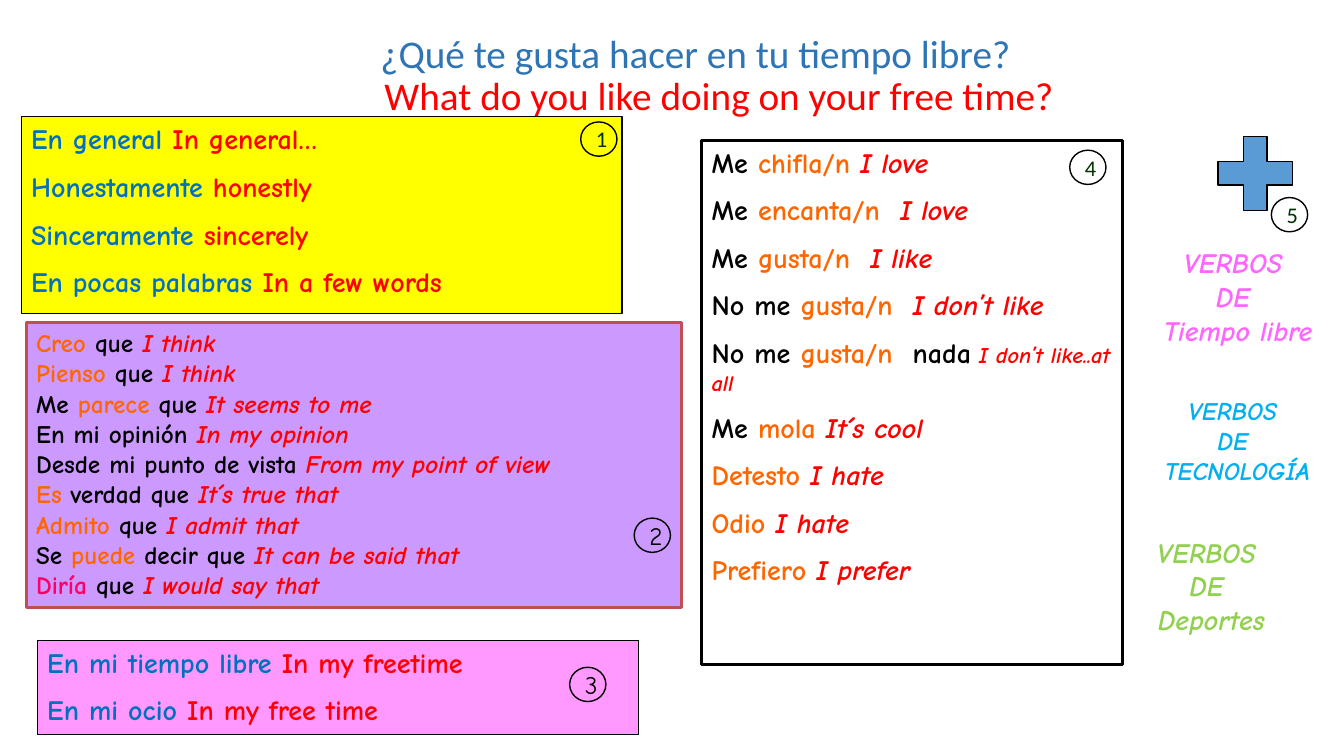
import dataclasses

import pptx
import pptx.dml.color
import pptx.enum.shapes
import pptx.enum.text
import pptx.util

PX = 9144
SHAPE = pptx.enum.shapes.MSO_SHAPE
ALIGN = pptx.enum.text.PP_ALIGN
ANCHOR = pptx.enum.text.MSO_ANCHOR


@dataclasses.dataclass(frozen=True)
class Theme:
    heading_font: str = "Calibri"
    body_font: str = "Comic Neue"
    title_size: int = 28
    large: int = 20
    medium: int = 18
    small: int = 16
    black: str = "000000"
    red: str = "FF0000"
    title_blue: str = "2E75B6"
    blue: str = "0070C0"
    orange: str = "FF6600"
    rose: str = "FF0066"
    dark_green: str = "003300"
    yellow: str = "FFFF00"
    purple: str = "CC99FF"
    pink: str = "FF99FF"
    brick: str = "C0504D"
    plus_blue: str = "5B9BD5"
    magenta: str = "FF66FF"
    cyan: str = "00B0F0"
    lime: str = "92D050"


THEME = Theme()

STYLES = {
    "spanish": (THEME.blue, False, THEME.large),
    "english": (THEME.red, False, THEME.large),
    "plain": (THEME.black, False, THEME.large),
    "verb": (THEME.orange, False, THEME.large),
    "meaning": (THEME.red, True, THEME.large),
    "small meaning": (THEME.red, True, THEME.small),
    "opinion plain": (THEME.black, False, THEME.medium),
    "opinion verb": (THEME.orange, False, THEME.medium),
    "opinion rose": (THEME.rose, False, THEME.medium),
    "opinion meaning": (THEME.red, True, THEME.medium),
}

OPENERS = [
    ("En general ", "In general…"),
    ("Honestamente ", "honestly"),
    ("Sinceramente ", "sincerely"),
    ("En pocas palabras ", "In a few words"),
]
FREE_TIME = [
    ("En mi tiempo libre ", "In my freetime"),
    ("En mi ocio ", "In my free time"),
]
OPINIONS = [
    ("", "Creo", " que ", "I think"),
    ("", "Pienso", " que ", "I think"),
    ("Me ", "parece", " que ", "It seems to me"),
    ("En mi opinión ", "", "", "In my opinion"),
    ("Desde mi punto de vista ", "", "", "From my point of view"),
    ("", "Es", " verdad que ", "It´s true that"),
    ("", "Admito", " que ", "I admit that"),
    ("Se ", "puede", " decir que ", "It can be said that"),
    ("", "Diría", " que ", "I would say that"),
]
LIKES = [
    ("Me ", "chifla/n ", "", "I love"),
    ("Me ", "encanta/n  ", "", "I love"),
    ("Me ", "gusta/n  ", "", "I like"),
    ("No me ", "gusta/n  ", "", "I don’t like"),
    ("No me ", "gusta/n  ", "nada", " I don’t like..at all"),
    ("Me ", "mola ", "", "It´s cool"),
    ("", "Detesto ", "", "I hate"),
    ("", "Odio ", "", "I hate"),
    ("", "Prefiero ", "", "I prefer"),
]


def color(value):
    return pptx.dml.color.RGBColor.from_string(value)


def scaled(box):
    return [length * PX for length in box]


def format_run(run, font, size, tint, bold=False, italic=False):
    run.font.name = font
    run.font.size = pptx.util.Pt(size)
    run.font.color.rgb = color(tint)
    run.font.bold = bold
    run.font.italic = italic


def add_outlined(slide, kind, box, fill, line, weight):
    shape = slide.shapes.add_shape(kind, *scaled(box))
    shape.shadow.inherit = False
    if fill:
        shape.fill.solid()
        shape.fill.fore_color.rgb = color(fill)
    else:
        shape.fill.background()
    shape.line.color.rgb = color(line)
    shape.line.width = pptx.util.Pt(weight)
    return shape


def add_title(slide, box):
    frame = slide.shapes.add_textbox(*scaled(box)).text_frame
    frame.word_wrap = True
    frame.vertical_anchor = ANCHOR.BOTTOM
    paragraph = frame.paragraphs[0]
    paragraph.text = (
        "¿Qué te gusta hacer en tu tiempo libre? \v"
        "What do you like doing on your free time?"
    )
    paragraph.alignment = ALIGN.CENTER
    paragraph.line_spacing = 0.9
    properties = paragraph._p.get_or_add_pPr()
    properties.set("marL", str(38 * PX))
    properties.set("indent", str(-38 * PX))
    for run, tint in zip(paragraph.runs, (THEME.title_blue, THEME.red)):
        format_run(run, THEME.heading_font, THEME.title_size, tint)


def add_panel(slide, box, rows, fill, line, weight, gap):
    shape = add_outlined(slide, SHAPE.RECTANGLE, box, fill, line, weight)
    frame = shape.text_frame
    frame.word_wrap = True
    frame.vertical_anchor = ANCHOR.TOP
    for index, row in enumerate(rows):
        paragraph = frame.add_paragraph() if index else frame.paragraphs[0]
        paragraph.alignment = ALIGN.LEFT
        paragraph.space_before = pptx.util.Pt(gap if index else 0)
        for style, text in row:
            if text:
                run = paragraph.add_run()
                run.text = text
                tint, italic, size = STYLES[style]
                format_run(run, THEME.body_font, size, tint, True, italic)


def translation_rows(pairs):
    return [zip(("spanish", "english"), pair) for pair in pairs]


def opinion_rows():
    for row in OPINIONS:
        verb = "opinion rose" if row[1] == "Diría" else "opinion verb"
        yield zip(("opinion plain", verb, "opinion plain", "opinion meaning"), row)


def like_rows():
    for row in LIKES:
        meaning = "small meaning" if row[2] else "meaning"
        yield zip(("plain", "verb", "plain", meaning), row)


def add_verb_heading(slide, box, topic, size, tint):
    frame = slide.shapes.add_textbox(*scaled(box)).text_frame
    frame.word_wrap = True
    frame.text = f"VERBOS \nDE \n{topic}"
    for paragraph in frame.paragraphs:
        paragraph.alignment = ALIGN.CENTER
        format_run(paragraph.runs[0], THEME.body_font, size, tint, True, True)


def add_badge(slide, left, top, number, font, size, tint):
    shape = add_outlined(slide, SHAPE.OVAL, (left, top, 36, 34), None, THEME.black, 1)
    frame = shape.text_frame
    frame.word_wrap = True
    frame.vertical_anchor = ANCHOR.MIDDLE
    frame.text = number
    frame.paragraphs[0].alignment = ALIGN.CENTER
    format_run(frame.paragraphs[0].runs[0], font, size, tint)


def main():
    presentation = pptx.Presentation()
    presentation.slide_width = 1333 * PX
    presentation.slide_height = 750 * PX
    slide = presentation.slides.add_slide(presentation.slide_layouts[6])

    add_title(slide, (244, 28, 900, 95))
    add_panel(slide, (696, 139, 417, 520), like_rows(), None, THEME.black, 2.25, 10)
    add_outlined(slide, SHAPE.MATH_PLUS, (1195, 122, 100, 100), THEME.plus_blue, THEME.black, 1)
    add_panel(slide, (37, 635, 596, 94), translation_rows(FREE_TIME), THEME.pink, THEME.black, 0.75, 10)
    add_panel(slide, (26, 320, 650, 283), opinion_rows(), THEME.purple, THEME.brick, 2, 0)
    add_panel(slide, (21, 116, 596, 195), translation_rows(OPENERS), THEME.yellow, THEME.black, 0.75, 10)

    add_verb_heading(slide, (1045, 239, 366, 111), "Tiempo libre", THEME.large, THEME.magenta)
    add_verb_heading(slide, (1121, 387, 212, 101), "TECNOLOGÍA", THEME.medium, THEME.cyan)
    add_verb_heading(slide, (969, 526, 465, 111), "Deportes", THEME.large, THEME.lime)

    green_digit = (THEME.heading_font, THEME.small, THEME.dark_green)
    black_digit = (THEME.body_font, THEME.medium, THEME.black)
    add_badge(slide, 576, 121, "1", *green_digit)
    add_badge(slide, 629, 514, "2", *black_digit)
    add_badge(slide, 565, 662, "3", *black_digit)
    add_badge(slide, 1061, 149, "4", *green_digit)
    add_badge(slide, 1261, 196, "5", *green_digit)

    presentation.save("out.pptx")


if __name__ == "__main__":
    main()
